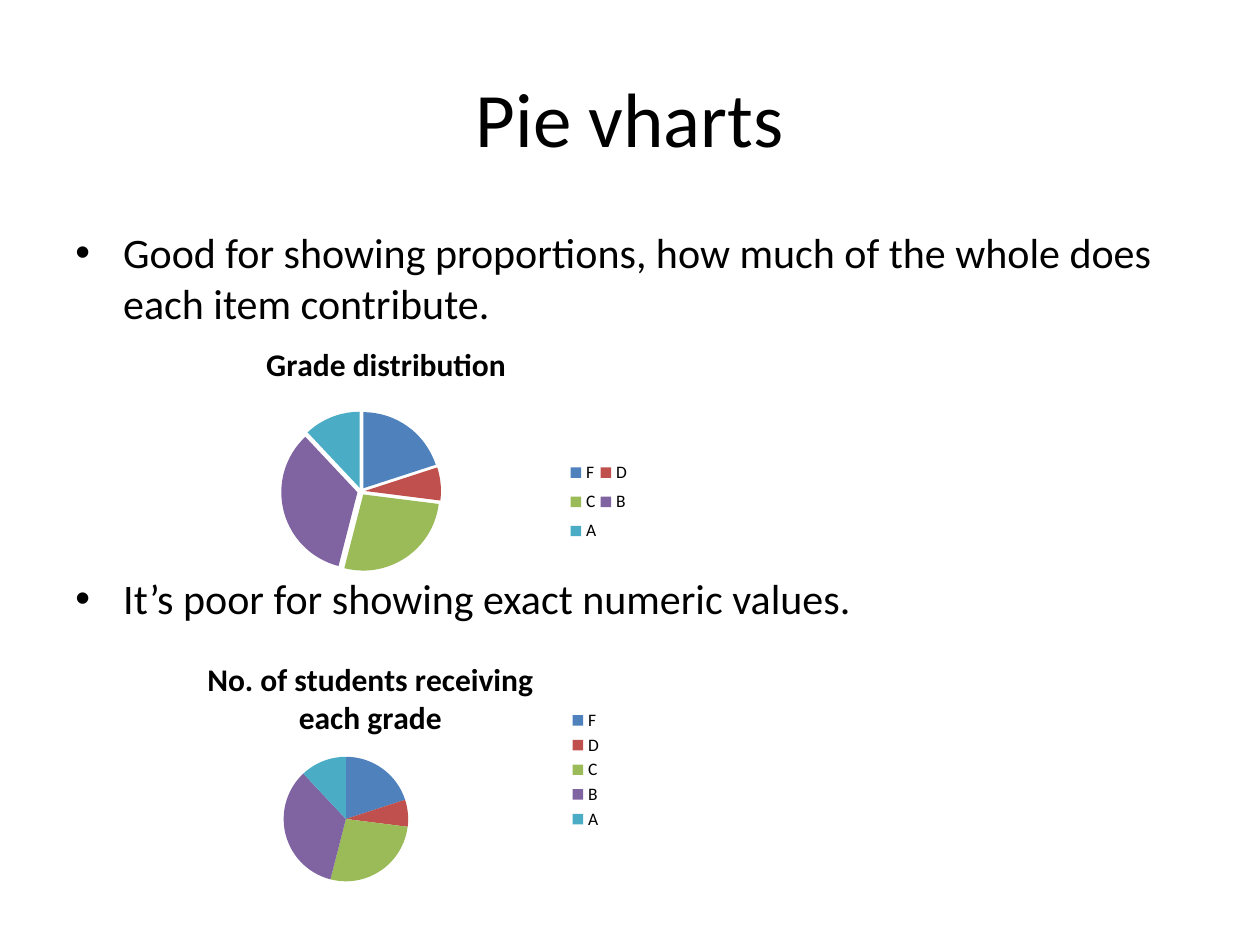
from pptx import Presentation
from pptx.chart.data import CategoryChartData
from pptx.dml.color import RGBColor
from pptx.enum.chart import XL_CHART_TYPE, XL_LEGEND_POSITION
from pptx.enum.text import MSO_ANCHOR, PP_ALIGN
from pptx.oxml import parse_xml
from pptx.oxml.ns import nsdecls, qn
from pptx.util import Inches, Pt

PIE = XL_CHART_TYPE.PIE
RIGHT = XL_LEGEND_POSITION.RIGHT
MIDDLE = MSO_ANCHOR.MIDDLE
CENTER = PP_ALIGN.CENTER

BLACK = RGBColor(0x00, 0x00, 0x00)
SLICE_COLORS = [
    RGBColor(0x4F, 0x81, 0xBD),
    RGBColor(0xC0, 0x50, 0x4D),
    RGBColor(0x9B, 0xBB, 0x59),
    RGBColor(0x80, 0x64, 0xA2),
    RGBColor(0x4B, 0xAC, 0xC6),
]
GRADES = ["F", "D", "C", "B", "A"]
SHARES = [20, 7, 27, 34, 12]
BULLETS = [
    ("Good for showing proportions, how much of the whole does each item contribute.", 4.8),
    ("It’s poor for showing exact numeric values.", 140),
]
CHARTS = [
    {
        "title": "Grade distribution",
        "box": (1.08, 2.58, 3.97, 2.08),
        "plot": (0.29, 0.33, 0.32, 0.61),
        "legend": (0.86, 0.49, 0.13, 0.37),
        "explosion": 5,
    },
    {
        "title": "No. of students receiving each grade",
        "box": (1, 5.08, 3.88, 2.06),
        "plot": (0.32, 0.45, 0.26, 0.48),
    },
]


def format_font(font, size, bold=False):
    for name, value in {"name": "Calibri", "size": Pt(size), "bold": bold}.items():
        setattr(font, name, value)
    font.color.rgb = BLACK


def add_title(s, text):
    sp = s.shapes.title
    box = {"left": 0.5, "top": 0.3, "width": 9, "height": 1.25}
    for name, value in box.items():
        setattr(sp, name, Inches(value))
    tf = sp.text_frame
    tf.vertical_anchor = MIDDLE
    p = tf.paragraphs[0]
    p.alignment = CENTER
    r = p.add_run()
    r.text = text
    format_font(r.font, 44)


def add_bullets(s, bullets):
    sp = s.shapes.add_textbox(Inches(0.5), Inches(1.75), Inches(9), Inches(4.95))
    tf = sp.text_frame
    tf.word_wrap = True
    for i, (text, gap) in enumerate(bullets):
        p = tf.add_paragraph() if i else tf.paragraphs[0]
        p.space_before = Pt(gap)
        pPr = p._p.get_or_add_pPr()
        pPr.set("marL", str(Inches(0.38)))
        pPr.set("indent", str(-Inches(0.38)))
        pPr.append(parse_xml(f'<a:buFont {nsdecls("a")} typeface="Arial"/>'))
        pPr.append(parse_xml(f'<a:buChar {nsdecls("a")} char="•"/>'))
        r = p.add_run()
        r.text = text
        format_font(r.font, 24)


def make_layout(area, inner=False):
    target = '<c:layoutTarget val="inner"/>' if inner else ""
    modes = "".join(f'<c:{k}Mode val="edge"/>' for k in "xy")
    sizes = "".join(f'<c:{k} val="{v}"/>' for k, v in zip("xywh", area))
    return parse_xml(
        f'<c:layout {nsdecls("c")}><c:manualLayout>{target}{modes}{sizes}'
        "</c:manualLayout></c:layout>"
    )


def place_plot(chart, area):
    plot_area = chart.plots[0]._element.getparent()
    for old in plot_area.findall(qn("c:layout")):
        plot_area.remove(old)
    plot_area.insert(0, make_layout(area, inner=True))


def place_legend(legend, area):
    el = legend._element
    for old in el.findall(qn("c:layout")):
        el.remove(old)
    el.find(qn("c:legendPos")).addnext(make_layout(area))


def explode(series, percent):
    first_point = series._element.find(qn("c:dPt"))
    first_point.addprevious(
        parse_xml(f'<c:explosion {nsdecls("c")} val="{percent}"/>')
    )


def add_pie(s, title, box, plot, legend=None, explosion=0):
    data = CategoryChartData()
    data.categories = GRADES
    data.add_series("Series 1", SHARES)
    chart = s.shapes.add_chart(PIE, *map(Inches, box), data).chart
    format_font(chart.font, 10)

    chart.has_title = True
    p = chart.chart_title.text_frame.paragraphs[0]
    r = p.add_run()
    r.text = title
    format_font(r.font, 18, bold=True)
    chart.chart_title.include_in_layout = False

    chart.has_legend = True
    chart.legend.position = RIGHT
    chart.legend.include_in_layout = False
    if legend:
        place_legend(chart.legend, legend)

    chart.plots[0].vary_by_categories = True
    series = chart.plots[0].series[0]
    for i, color in enumerate(SLICE_COLORS):
        fill = series.points[i].format.fill
        fill.solid()
        fill.fore_color.rgb = color
    if explosion:
        explode(series, explosion)
    place_plot(chart, plot)


def main():
    prs = Presentation()
    prs.slide_width, prs.slide_height = Inches(10), Inches(7.5)
    s = prs.slides.add_slide(prs.slide_layouts[5])
    add_title(s, "Pie vharts")
    add_bullets(s, BULLETS)
    for chart in CHARTS:
        add_pie(s, **chart)
    prs.save("out.pptx")


if __name__ == "__main__":
    main()
